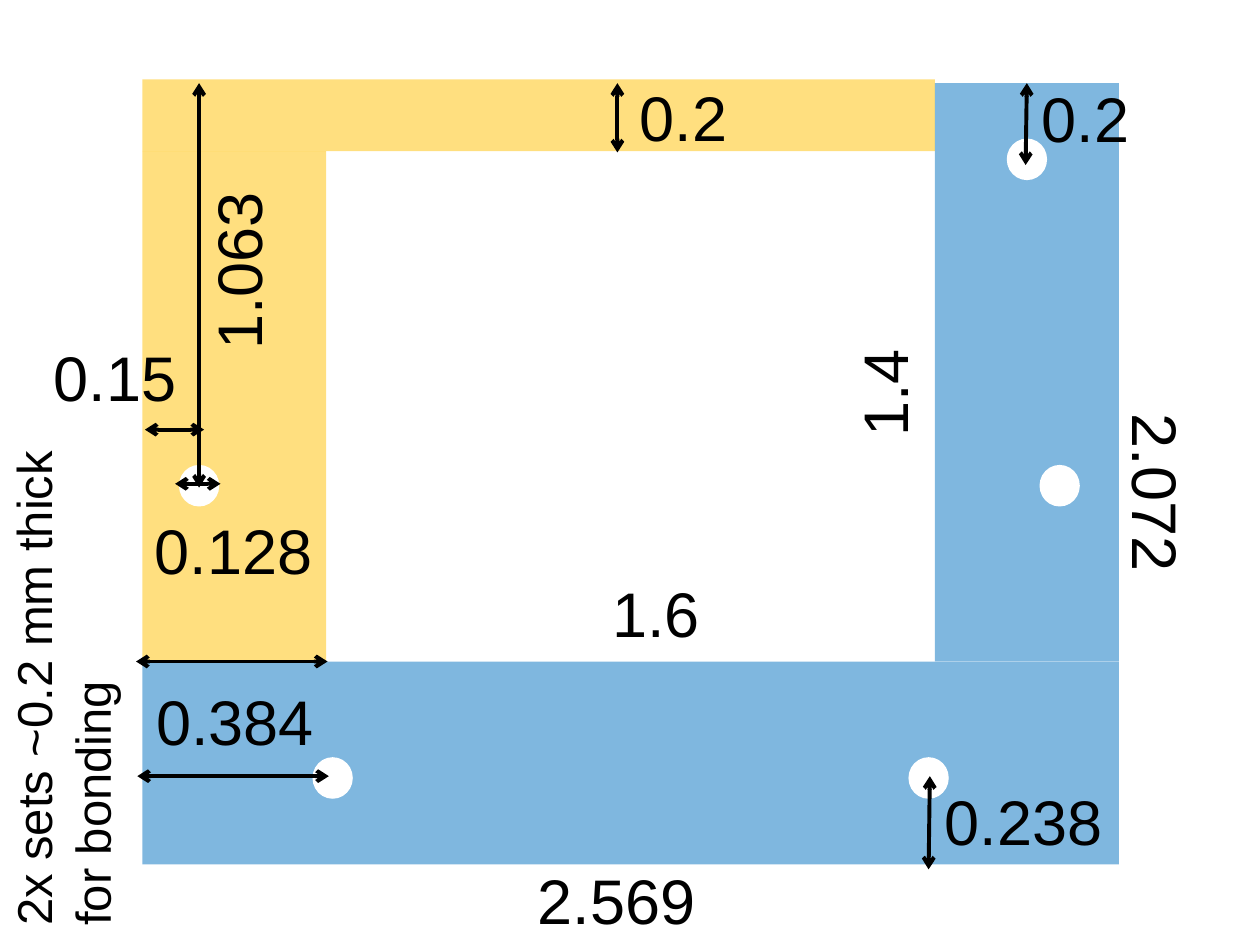
from lxml import etree
from pptx import Presentation
from pptx.dml.color import RGBColor
from pptx.enum.shapes import MSO_CONNECTOR, MSO_SHAPE
from pptx.enum.text import MSO_AUTO_SIZE
from pptx.oxml.ns import qn
from pptx.util import Inches, Pt

BLUE = RGBColor(0x00, 0x70, 0xC0)
AMBER = RGBColor(0xFF, 0xC0, 0x00)
WHITE = RGBColor(0xFF, 0xFF, 0xFF)
BLACK = RGBColor(0x00, 0x00, 0x00)
FONT = "Arial"

# Left and top of each hole, from the frame's top left corner
HOLES = [(0.29, 3.06), (7.12, 3.06), (6.86, 0.47), (1.35, 5.38), (6.08, 5.38)]

# Start x, start y, end x, end y of each dimension arrow, from the same corner
ARROWS = [
    (0.49, 2.78, 0.02, 2.78),
    (0.62, 3.21, 0.26, 3.21),
    (0.45, 3.24, 0.45, 0.03),
    (3.77, 0.58, 3.77, 0.03),
    (1.47, 4.62, -0.05, 4.62),
    (1.48, 5.53, -0.04, 5.53),
    (6.24, 6.27, 6.25, 5.53),
    (7.01, 0.68, 7.02, 0.03),
]

# Value, left, top and rotation of each dimension label, from the same corner
DIMENSIONS = [
    ("0.15", -0.8, 2.01, 0),
    ("2.072", 7.32, 2.93, 90),
    ("2.569", 3.04, 6.16, 0),
    ("1.4", 5.44, 2.13, 270),
    ("0.2", 3.85, -0.06, 0),
    ("1.063", 0.03, 1.16, 270),
    ("1.6", 3.63, 3.88, 0),
    ("0.128", 0, 3.38, 0),
    ("0.384", 0.01, 4.74, 0),
    ("0.238", 6.27, 5.53, 0),
    ("0.2", 7.04, -0.05, 0),
]


def add_filled(slide, kind, left, top, width, height, color, opacity=100):
    shape = slide.shapes.add_shape(
        kind, Inches(left), Inches(top), Inches(width), Inches(height))
    shape.shadow.inherit = False
    shape.line.fill.background()
    shape.fill.solid()
    shape.fill.fore_color.rgb = color
    if opacity < 100:
        color_element = shape.fill._xPr.find(".//" + qn("a:srgbClr"))
        alpha = etree.SubElement(color_element, qn("a:alpha"))
        alpha.set("val", str(opacity * 1000))


def add_double_arrow(slide, x1, y1, x2, y2):
    arrow = slide.shapes.add_connector(
        MSO_CONNECTOR.STRAIGHT, Inches(x1), Inches(y1), Inches(x2), Inches(y2))
    arrow.line.color.rgb = BLACK
    arrow.line.width = Pt(2.25)
    line = arrow.line._get_or_add_ln()
    for end in ("a:headEnd", "a:tailEnd"):
        etree.SubElement(line, qn(end)).set("type", "arrow")
    etree.SubElement(arrow._element.spPr, qn("a:effectLst"))


def add_label(slide, text, left, top, width, height, size, rotation=0):
    label = slide.shapes.add_textbox(
        Inches(left), Inches(top), Inches(width), Inches(height))
    label.rotation = rotation
    frame = label.text_frame
    frame.text = text
    frame.word_wrap = False
    frame.auto_size = MSO_AUTO_SIZE.SHAPE_TO_FIT_TEXT
    for paragraph in frame.paragraphs:
        for run in paragraph.runs:
            run.font.name = FONT
            run.font.size = Pt(size)
            run.font.color.rgb = BLACK


def draw_plates(slide, left, top, width, height):
    """Four translucent plates around the open window."""
    side, base, lintel = 1.46, 1.61, 0.57
    base_top = top + height - base
    right_plate = left + width - side
    plates = [
        (left, base_top, width, base, BLUE),
        (left, top, width - side, lintel, AMBER),
        (right_plate, top + 0.03, side, height - base - 0.03, BLUE),
        (left, top + lintel, side, height - base - lintel, AMBER),
    ]
    for *box, color in plates:
        add_filled(slide, MSO_SHAPE.RECTANGLE, *box, color, opacity=50)


def draw_holes(slide, left, top):
    for x, y in HOLES:
        add_filled(slide, MSO_SHAPE.OVAL, left + x, top + y, 0.32, 0.33, WHITE)


def draw_dimensions(slide, left, top):
    for x1, y1, x2, y2 in ARROWS:
        add_double_arrow(slide, left + x1, top + y1, left + x2, top + y2)
    for value, x, y, rotation in DIMENSIONS:
        width = 0.06 + 0.28 * len(value)
        add_label(slide, value, left + x, top + y, width, 0.71, 36, rotation)


def main():
    deck = Presentation()
    deck.slide_width, deck.slide_height = Inches(10), Inches(7.5)
    slide = deck.slides.add_slide(deck.slide_layouts[6])
    left, top, width, height = 1.13, 0.63, 7.75, 6.23
    draw_plates(slide, left, top, width, height)
    draw_holes(slide, left, top)
    add_label(slide, "2x sets ~0.2 mm thick\nfor bonding",
              -1.51, 4.92, 4.01, 1.04, 28, rotation=270)
    draw_dimensions(slide, left, top)
    deck.save("out.pptx")


if __name__ == "__main__":
    main()
